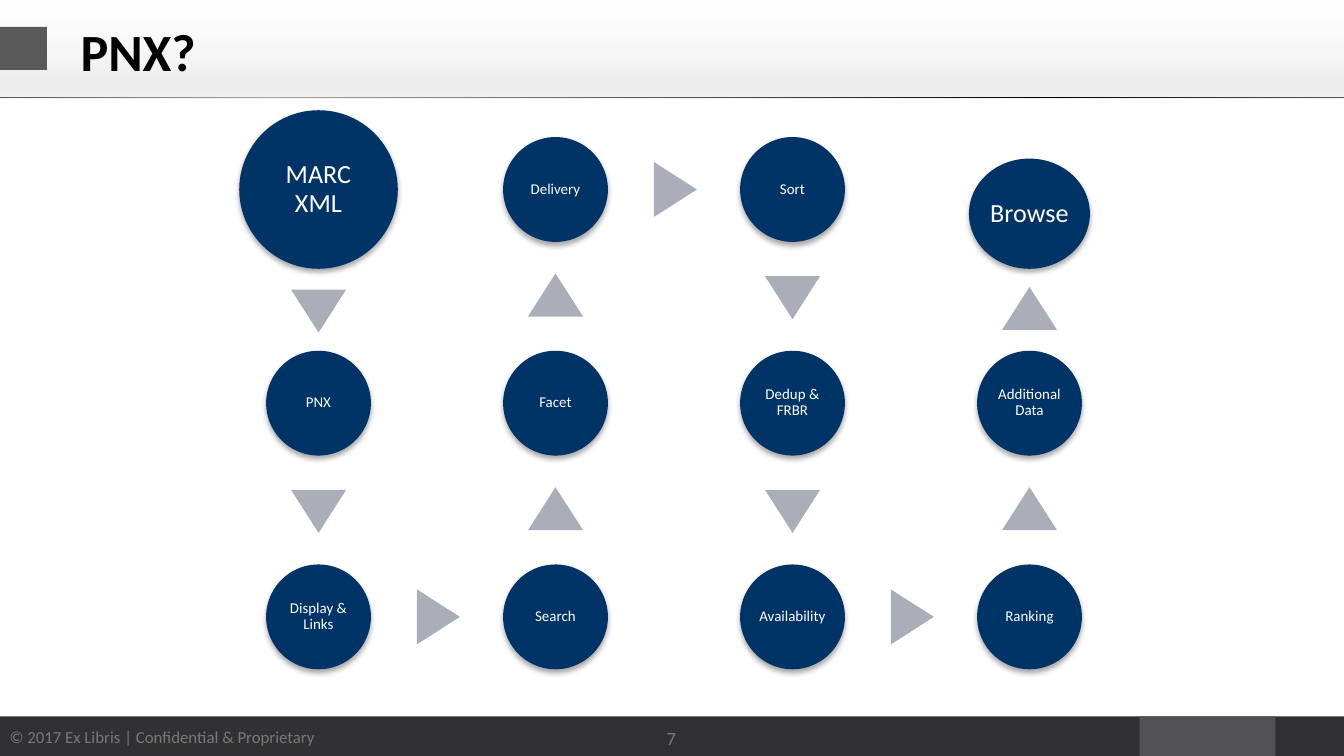
"""Build the PNX slide: a snaking flow of circles from MARC XML to Browse."""
from pptx import Presentation
from pptx.dml.color import RGBColor
from pptx.enum.shapes import MSO_SHAPE
from pptx.enum.text import MSO_ANCHOR, PP_ALIGN
from pptx.oxml import parse_xml
from pptx.oxml.ns import nsdecls, qn
from pptx.util import Inches, Pt

RECT, OVAL, TRIANGLE = MSO_SHAPE.RECTANGLE, MSO_SHAPE.OVAL, MSO_SHAPE.ISOSCELES_TRIANGLE
MIDDLE, TOP = MSO_ANCHOR.MIDDLE, MSO_ANCHOR.TOP
LEFT, CENTER = PP_ALIGN.LEFT, PP_ALIGN.CENTER

TITLE = "PNX?"
COPYRIGHT = "© 2017 Ex Libris | Confidential & Proprietary"
PAGE = "7"
STEPS = ["MARC XML", "PNX", "Display & Links", "Search", "Facet", "Delivery", "Sort",
         "Dedup & FRBR", "Availability", "Ranking", "Additional Data", "Browse"]

THEME = {
    "font": "Calibri",
    "title": "000000", "footer_text": "787878", "step_text": "FFFFFF",
    "step": "003466", "arrow": "ABAEB8",
    "footer": "313133", "footer_tab": "525254", "title_tab": "595959",
    "header": [(0, "FAFAFA", 12), (66, "D7D7D7", 30), (83, "D7D7D7", 47), (100, "E4E4E4", 54)],
    "rule": [(0, "595959", 100), (20, "A6A6A6", 100), (50, "595959", 100),
             (78, "000000", 100), (100, "595959", 100)],
    "title_size": 28, "end_size": 14, "step_size": 8, "copyright_size": 9, "page_size": 10,
}

SLIDE_W = Inches(10)
SLIDE_H = SLIDE_W * 9 // 16
ROWS, COLUMNS = 3, 4
FIRST_X, LAST_X = 2.37, 7.66
FIRST_Y, LAST_Y = 1.41, 4.59
PITCH_X = (LAST_X - FIRST_X) / (COLUMNS - 1)
PITCH_Y = (LAST_Y - FIRST_Y) / (ROWS - 1)
STEP_SIZE = (0.78, 0.78)
END_SIZES = {"MARC XML": (1.18, 1.18), "Browse": (0.9, 0.82)}
BROWSE_DROP = 0.18
ARROW_W, ARROW_H, ARROW_NUDGE = 0.41, 0.32, 0.01


def add_solid(slide, kind, box, color=None):
    shape = slide.shapes.add_shape(kind, *map(Inches, box))
    shape.shadow.inherit = False
    shape.line.fill.background()
    if color:
        shape.fill.solid()
        shape.fill.fore_color.rgb = RGBColor.from_string(color)
    return shape


def add_gradient(slide, box, stops, degrees):
    shape = add_solid(slide, RECT, box)
    stop_xml = "".join(
        f'<a:gs pos="{pos * 1000}"><a:srgbClr val="{color}">'
        f'<a:alpha val="{alpha * 1000}"/></a:srgbClr></a:gs>'
        for pos, color, alpha in stops)
    shape._element.spPr.find(qn("a:prstGeom")).addnext(parse_xml(
        f'<a:gradFill {nsdecls("a")} rotWithShape="1"><a:gsLst>{stop_xml}</a:gsLst>'
        f'<a:lin ang="{degrees * 60000}" scaled="0"/></a:gradFill>'))


def write(shape, text, size, color, align=CENTER, anchor=MIDDLE, wrap=True, bold=False):
    frame = shape.text_frame
    frame.text = text
    frame.word_wrap = wrap
    frame.vertical_anchor = anchor
    paragraph = frame.paragraphs[0]
    paragraph.alignment = align
    paragraph.font.name = THEME["font"]
    paragraph.font.size = Pt(size)
    paragraph.font.bold = bold
    paragraph.font.color.rgb = RGBColor.from_string(color)
    return frame


def add_frame_parts(slide):
    add_solid(slide, RECT, (0, 5.33, 10, 0.32), THEME["footer"])
    copyright_box = slide.shapes.add_textbox(*map(Inches, (-0.04, 5.36, 2.49, 0.25)))
    write(copyright_box, COPYRIGHT, THEME["copyright_size"], THEME["footer_text"],
          anchor=TOP, wrap=False)
    add_solid(slide, RECT, (8.48, 5.33, 1.01, 0.32), THEME["footer_tab"])
    add_gradient(slide, (-0.01, 0.01, 10.01, 0.72), THEME["header"], 90)
    add_solid(slide, RECT, (0, 0.2, 0.35, 0.32), THEME["title_tab"])
    add_gradient(slide, (0, 0.72, 10, 0.01), THEME["rule"], 0)
    page_box = slide.shapes.add_textbox(*map(Inches, (4.7, 5.29, 0.59, 0.4)))
    write(page_box, PAGE, THEME["page_size"], THEME["footer_text"])


def add_title(slide):
    title = slide.shapes.title
    title.left, title.top, title.width, title.height = map(Inches, (0.5, 0.06, 9, 0.63))
    write(title, TITLE, THEME["title_size"], THEME["title"], align=LEFT, bold=True)
    slide.shapes._spTree.append(title._element)


def place_steps():
    places = []
    for index, label in enumerate(STEPS):
        column, position = divmod(index, ROWS)
        row = position if column % 2 == 0 else ROWS - 1 - position
        x, y = FIRST_X + column * PITCH_X, FIRST_Y + row * PITCH_Y
        if label == "Browse":
            y += BROWSE_DROP
        places.append((label, x, y, *END_SIZES.get(label, STEP_SIZE)))
    return places


def add_step(slide, label, x, y, width, height):
    circle = add_solid(slide, OVAL, (x - width / 2, y - height / 2, width, height), THEME["step"])
    circle._element.spPr.find(qn("a:effectLst")).append(parse_xml(
        f'<a:outerShdw {nsdecls("a")} blurRad="{Pt(3.1)}" dist="{Pt(1.8)}" dir="5400000" '
        'rotWithShape="0"><a:srgbClr val="000000"><a:alpha val="35000"/></a:srgbClr>'
        '</a:outerShdw>'))
    is_end = label in END_SIZES
    frame = write(circle, label, THEME["end_size" if is_end else "step_size"], THEME["step_text"])
    margin = Inches(0.02 if is_end else 0.01)
    frame.margin_left = frame.margin_right = frame.margin_top = frame.margin_bottom = margin
    frame.paragraphs[0].line_spacing = 0.9


def add_arrow(slide, start, end):
    _, x1, y1, w1, h1 = start
    _, x2, y2, w2, h2 = end
    if x2 - x1 > PITCH_X / 2:
        x, y, rotation = (x1 + w1 / 2 + x2 - w2 / 2) / 2 + ARROW_NUDGE, y1, 90
    else:
        way = 1 if y2 > y1 else -1
        x, y = x1, (y1 + way * h1 / 2 + y2 - way * h2 / 2) / 2 + way * ARROW_NUDGE
        rotation = 180 if way > 0 else 0
    arrow = add_solid(slide, TRIANGLE, (x - ARROW_W / 2, y - ARROW_H / 2, ARROW_W, ARROW_H),
                      THEME["arrow"])
    arrow.rotation = rotation


def main():
    presentation = Presentation()
    presentation.slide_width, presentation.slide_height = SLIDE_W, SLIDE_H
    slide = presentation.slides.add_slide(presentation.slide_layouts[5])
    add_frame_parts(slide)
    add_title(slide)
    places = place_steps()
    for index, place in enumerate(places):
        if index:
            add_arrow(slide, places[index - 1], place)
        add_step(slide, *place)
    presentation.save("out.pptx")


if __name__ == "__main__":
    main()
